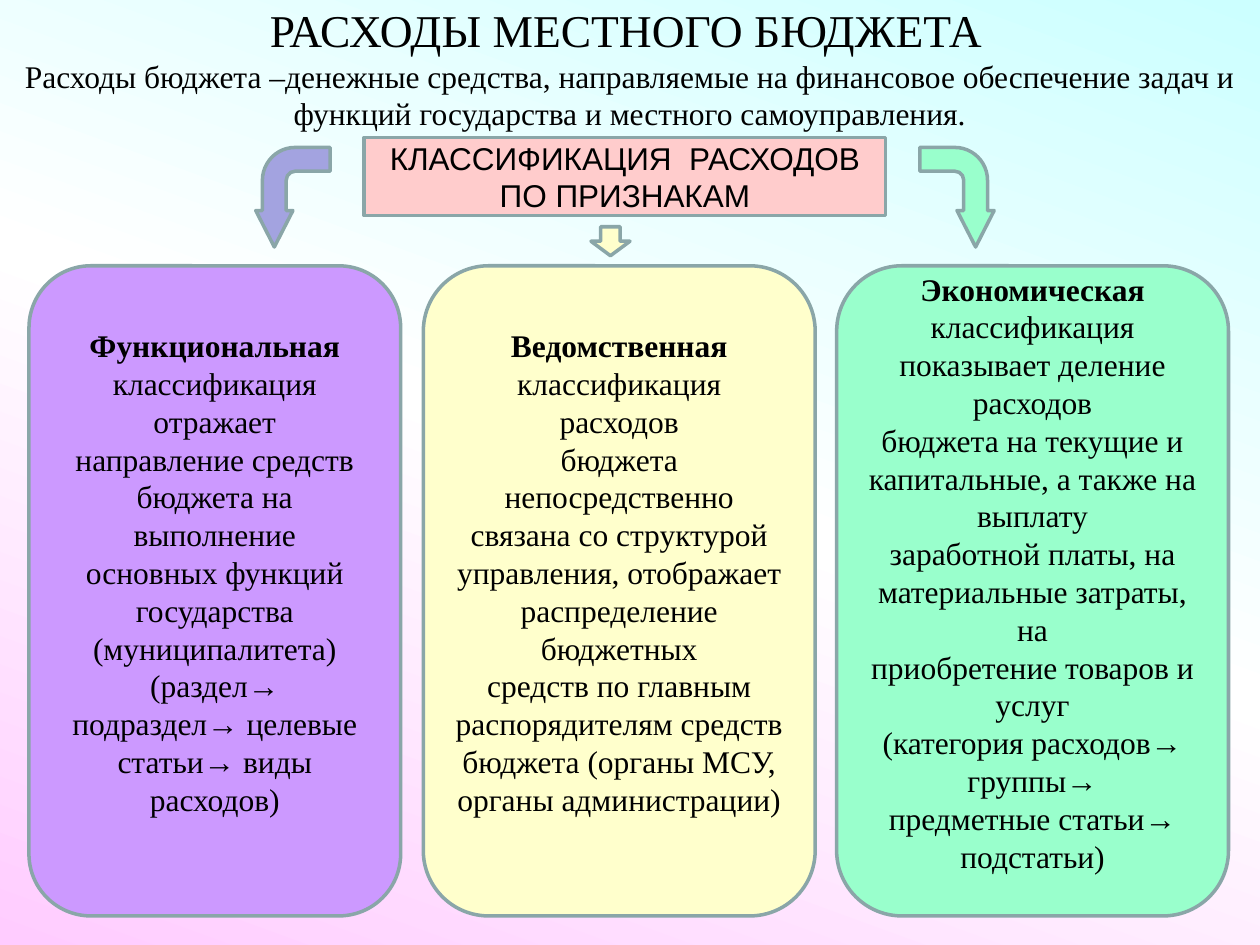
from copy import deepcopy

from pptx import Presentation
from pptx.dml.color import RGBColor
from pptx.enum.shapes import MSO_SHAPE
from pptx.enum.text import MSO_ANCHOR, PP_ALIGN
from pptx.util import Inches, Pt

# Content
TITLE = "РАСХОДЫ МЕСТНОГО БЮДЖЕТА"
DEFINITION = (
    "Расходы бюджета –денежные средства, направляемые на финансовое "
    "обеспечение задач и функций государства и местного самоуправления."
)
HEADING = "КЛАССИФИКАЦИЯ  РАСХОДОВ ПО ПРИЗНАКАМ"

# Each card: left, width, fill, bold opening, remaining text
CARDS = [
    (0.23, 2.95, "CC99FF", "Функциональная\n",
     "классификация отражает\nнаправление средств\nбюджета на выполнение\n"
     "основных функций\nгосударства\n(муниципалитета) (раздел→\n"
     "подраздел→ целевые\nстатьи→ виды расходов)"),
    (3.36, 3.11, "FFFFCC", "Ведомственная\n",
     "классификация расходов\nбюджета непосредственно\nсвязана со структурой\n"
     "управления, отображает\nраспределение бюджетных\nсредств по главным\n"
     "распорядителям средств\nбюджета (органы МСУ,\nорганы администрации)"),
    (6.64, 3.11, "99FFCC", "Экономическая ",
     "классификация\nпоказывает деление расходов\nбюджета на текущие и\n"
     "капитальные, а также на выплату\nзаработной платы, на\n"
     "материальные затраты, на\nприобретение товаров и услуг\n"
     "(категория расходов→ группы→\nпредметные статьи→ подстатьи)"),
]
CARD_TOP, CARD_HEIGHT = 2.11, 5.16

# Bent arrows: left, fill, mirrored
BENT_ARROWS = [(7.2, "99FFCC", False), (1.93, "A3A3E0", True)]
BENT_ADJUSTMENTS = (0.32, 0.25, 0.49, 0.44)

BACKGROUND = [(0, "CCFFFF"), (0.5, "FFFFFF"), (1, "FFCCFF")]
OUTLINE = "8AA6A8"
SERIF, SANS = "Times New Roman", "Arial"


def color(value):
    return RGBColor.from_string(value)


def write(holder, parts, size=18, font=SERIF):
    """Write (text, bold) parts as one centred paragraph."""
    frame = holder.text_frame
    frame.word_wrap = True
    frame.vertical_anchor = MSO_ANCHOR.MIDDLE
    paragraph = frame.paragraphs[0]
    paragraph.alignment = PP_ALIGN.CENTER
    paragraph.font.size = Pt(size)
    paragraph.font.name = font
    paragraph.font.color.rgb = color("000000")
    for text, bold in parts:
        for index, line in enumerate(text.split("\n")):
            if index:
                paragraph.add_line_break()
            if line:
                run = paragraph.add_run()
                run.text = line
                run.font.size = Pt(size)
                run.font.name = font
                run.font.bold = bold
                run.font.color.rgb = color("000000")
    return frame


def add_text(slide, box, text, size):
    write(slide.shapes.add_textbox(*map(Inches, box)), [(text, False)], size)


def add_outlined(slide, kind, box, fill):
    shape = slide.shapes.add_shape(kind, *map(Inches, box))
    shape.shadow.inherit = False
    shape.fill.solid()
    shape.fill.fore_color.rgb = color(fill)
    shape.line.color.rgb = color(OUTLINE)
    shape.line.width = Pt(2)
    return shape


def paint_background(slide):
    fill = slide.background.fill
    fill.gradient()
    fill.gradient_angle = 250
    stop_list = slide.element.xpath(".//a:gsLst")[0]
    stop_list.insert(1, deepcopy(stop_list[0]))
    for stop, (position, value) in zip(fill.gradient_stops, BACKGROUND):
        stop.position = position
        stop.color.rgb = color(value)


def main():
    deck = Presentation()
    deck.slide_width, deck.slide_height = Inches(10), Inches(7.5)
    slide = deck.slides.add_slide(deck.slide_layouts[6])
    paint_background(slide)

    # Title, definition and heading
    add_text(slide, (0.47, 0, 9, 0.47), TITLE, 26)
    add_text(slide, (0, 0.47, 10, 0.56), DEFINITION, 18)
    heading = add_outlined(slide, MSO_SHAPE.RECTANGLE, (2.89, 1.09, 4.14, 0.62), "FFCCCC")
    write(heading, [(HEADING, False)], font=SANS)

    # Classification cards, with text raised by half a line
    for left, width, fill, opening, body in CARDS:
        card = add_outlined(slide, MSO_SHAPE.ROUNDED_RECTANGLE,
                            (left, CARD_TOP, width, CARD_HEIGHT), fill)
        frame = write(card, [(opening, True), (body, False)])
        frame.margin_bottom = Inches(0.35)

    # Arrows from the heading to the cards
    for left, fill, mirrored in BENT_ARROWS:
        arrow = add_outlined(slide, MSO_SHAPE.BENT_ARROW, (left, 1.27, 0.79, 0.59), fill)
        for index, value in enumerate(BENT_ADJUSTMENTS):
            arrow.adjustments[index] = value
        arrow.rotation = 90
        if mirrored:
            arrow.element.spPr.xfrm.set("flipV", "1")
    add_outlined(slide, MSO_SHAPE.DOWN_ARROW, (4.69, 1.8, 0.31, 0.23), "FFFFCC")

    deck.save("out.pptx")


if __name__ == "__main__":
    main()
